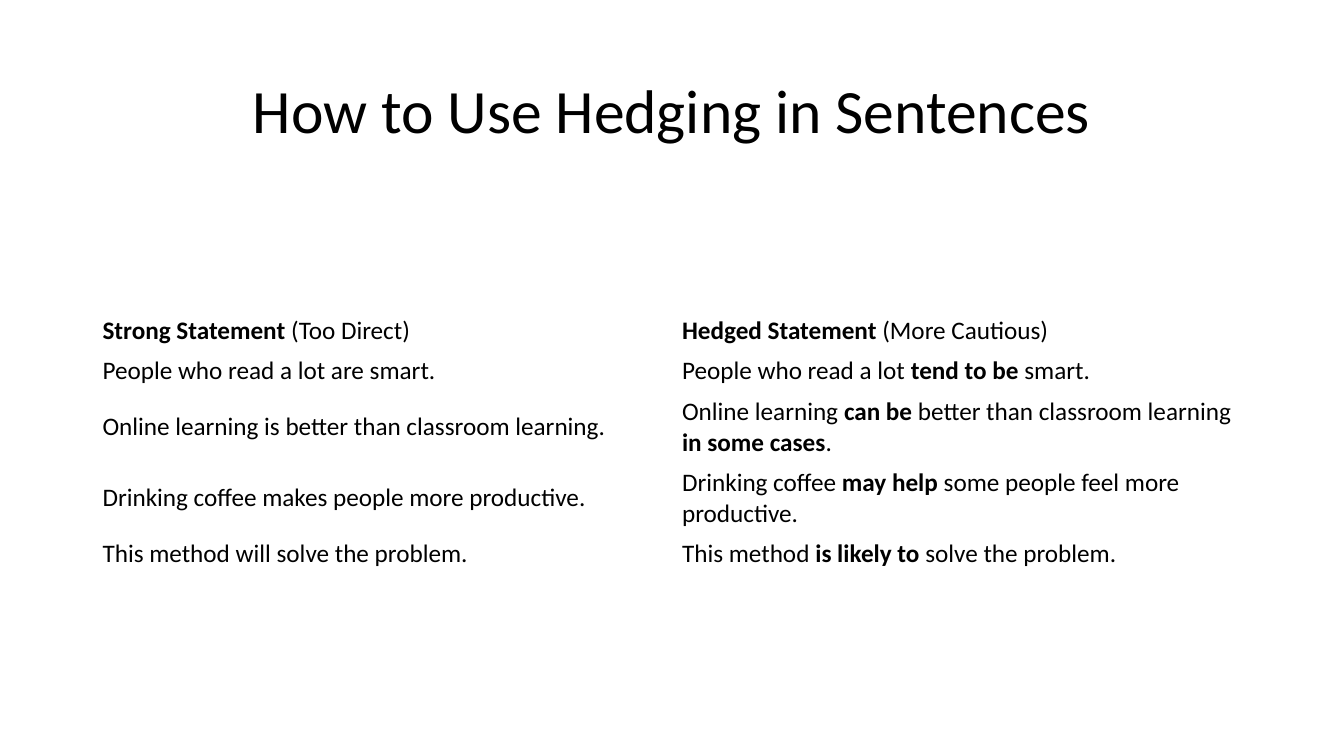
from pptx import Presentation
from pptx.dml.color import RGBColor
from pptx.enum.text import MSO_ANCHOR as Anchor, PP_ALIGN as Align
from pptx.util import Cm, Pt

BLACK = RGBColor(0x00, 0x00, 0x00)
FONT = "Calibri"
BOLD_MARK = "*"
SINGLE_ROW, DOUBLE_ROW = Cm(1.02), Cm(1.79)

TITLE = "How to Use Hedging in Sentences"
STATEMENTS = [
    (SINGLE_ROW, "*Strong Statement* (Too Direct)",
     "*Hedged Statement* (More Cautious)"),
    (SINGLE_ROW, "People who read a lot are smart.",
     "People who read a lot *tend to be* smart."),
    (DOUBLE_ROW, "Online learning is better than classroom learning.",
     "Online learning *can be* better than classroom learning *in some cases*."),
    (DOUBLE_ROW, "Drinking coffee makes people more productive.",
     "Drinking coffee *may help* some people feel more productive."),
    (SINGLE_ROW, "This method will solve the problem.",
     "This method *is likely to* solve the problem."),
]


def add_runs(para, marked_text, size):
    for index, text in enumerate(marked_text.split(BOLD_MARK)):
        if text:
            span = para.add_run()
            span.text = text
            span.font.name = FONT
            span.font.size = Pt(size)
            span.font.bold = index % 2 == 1
            span.font.color.rgb = BLACK


def add_title(page, left, top, width, height):
    frame = page.shapes.add_textbox(left, top, width, height).text_frame
    frame.word_wrap = True
    frame.vertical_anchor = Anchor.MIDDLE
    para = frame.paragraphs[0]
    para.alignment = Align.CENTER
    para.line_spacing = 0.9
    add_runs(para, TITLE, 44)


def add_statement_table(page, left, top, width):
    height = sum(row_height for row_height, *_ in STATEMENTS)
    table = page.shapes.add_table(len(STATEMENTS), 2, left, top, width, height).table
    table.first_row = False
    table.horz_banding = False
    for row, (row_height, *texts) in zip(table.rows, STATEMENTS):
        row.height = row_height
        for cell, text in zip(row.cells, texts):
            cell.fill.background()
            cell.vertical_anchor = Anchor.MIDDLE
            add_runs(cell.text_frame.paragraphs[0], text, 18)


def main():
    deck = Presentation()
    deck.slide_width, deck.slide_height = Cm(33.87), Cm(19.05)
    page = deck.slides.add_slide(deck.slide_layouts[6])
    left, width = Cm(2.33), Cm(29.21)
    add_title(page, left, Cm(1.01), width, Cm(3.68))
    add_statement_table(page, left, Cm(7.82), width)
    deck.save("out.pptx")


if __name__ == "__main__":
    main()
